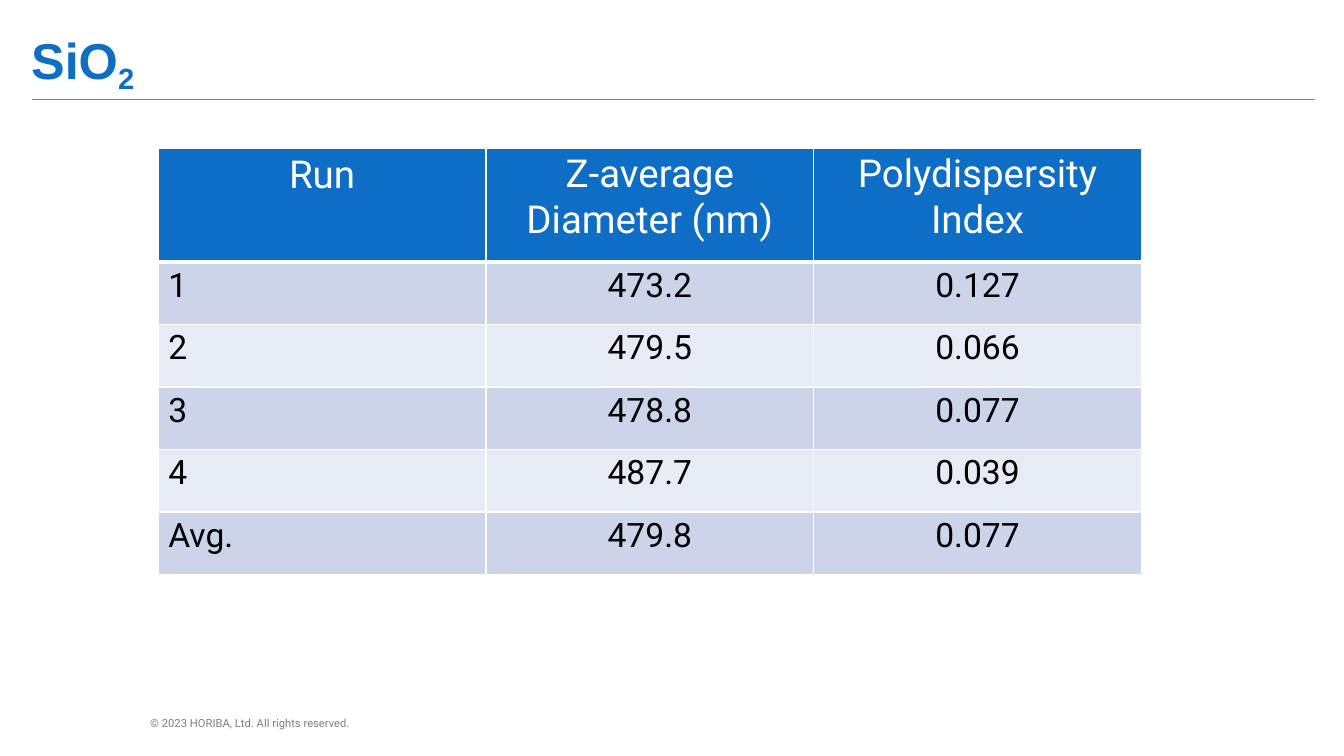
"""Build the SiO₂ particle-size results slide."""
from dataclasses import dataclass

from lxml.etree import SubElement
from pptx import Presentation
from pptx.dml.color import RGBColor as Color
from pptx.enum.shapes import MSO_CONNECTOR as Connector
from pptx.enum.text import PP_ALIGN as Align
from pptx.oxml.ns import qn
from pptx.slide import Slide
from pptx.table import _Cell as Cell
from pptx.text.text import Font
from pptx.util import Inches, Pt


@dataclass(frozen=True)
class Theme:
    """Colours, fonts and type sizes."""
    blue: str = "0E6EC5"
    grey: str = "7E7E7E"
    white: str = "FFFFFF"
    black: str = "000000"
    bands: tuple[str, str] = ("CCD4EA", "E7EBF5")
    title_font: str = "Arial"
    body_font: str = "Roboto"
    title_size: float = 36
    header_size: float = 27.5
    value_size: float = 24
    footer_size: float = 8


@dataclass(frozen=True)
class Label:
    """A line of text with its box and style."""
    spans: tuple[str, ...]
    left: float
    top: float
    width: float
    height: float
    font: str
    size: float
    color: str
    bold: bool = False


@dataclass(frozen=True)
class Measurement:
    """One row of the results table."""
    run: str
    diameter: str
    index: str


THEME = Theme()
LABELS = (
    Label(("SiO", "2"), 0.31, 0.28, 8.7, 0.63, THEME.title_font, THEME.title_size, THEME.blue, True),
    Label(("© 2023 HORIBA, Ltd. All rights reserved.",), 1.49, 7.1, 2.09, 0.16,
          THEME.body_font, THEME.footer_size, THEME.grey),
)
HEADERS = ("Run", "Z-average Diameter (nm)", "Polydispersity Index")
MEASUREMENTS = (
    Measurement("1", "473.2", "0.127"),
    Measurement("2", "479.5", "0.066"),
    Measurement("3", "478.8", "0.077"),
    Measurement("4", "487.7", "0.039"),
    Measurement("Avg.", "479.8", "0.077"),
)
COLUMN_WIDTH, HEADER_HEIGHT, ROW_HEIGHT = 3.25, 1.13, 0.62


def style_font(font: Font, name: str, size: float, color: str, bold: bool = False) -> None:
    """Set the typeface, size, colour and weight."""
    font.name, font.size, font.bold = name, Pt(size), bold
    font.color.rgb = Color.from_string(color)


def draw_label(page: Slide, label: Label) -> None:
    """Draw a text box, with any second span as a subscript."""
    box = page.shapes.add_textbox(*map(Inches, (label.left, label.top, label.width, label.height)))
    frame = box.text_frame
    frame.word_wrap = True
    frame.margin_left = frame.margin_right = frame.margin_bottom = 0
    frame.margin_top = Inches(0.01)
    para = frame.paragraphs[0]
    for position, text in enumerate(label.spans):
        span = para.add_run()
        span.text = text
        style_font(span.font, label.font, label.size, label.color, label.bold)
        if position:
            span._r.get_or_add_rPr().set("baseline", "-20000")


def draw_rule(page: Slide) -> None:
    """Draw the line under the title."""
    rule = page.shapes.add_connector(
        Connector.STRAIGHT, *map(Inches, (0.32, 0.99, 13.04, 0.99)))
    rule.line.color.rgb = Color.from_string(THEME.grey)
    rule.line.width = Pt(1)
    SubElement(rule._element.spPr, qn("a:effectLst"))


def set_borders(cell: Cell, top: float, bottom: float) -> None:
    """Give a cell white borders of the given widths in points."""
    properties = cell._tc.get_or_add_tcPr()
    for side, width in (("L", 1), ("R", 1), ("T", top), ("B", bottom)):
        border = SubElement(properties, qn(f"a:ln{side}"), w=str(Pt(width)))
        fill = SubElement(border, qn("a:solidFill"))
        SubElement(fill, qn("a:srgbClr"), val=THEME.white)


def fill_cell(cell: Cell, text: str, row: int, column: int) -> None:
    """Write and style a header or value cell."""
    header = row == 0
    set_borders(cell, 3 if row == 1 else 1, 3 if header else 1)
    cell.fill.solid()
    cell.fill.fore_color.rgb = Color.from_string(
        THEME.blue if header else THEME.bands[(row - 1) % 2])
    side = 0.2 if header else 0.1 if column == 0 else 0
    cell.margin_left, cell.margin_right = Inches(side), Inches(side)
    cell.margin_top = Inches(0.03 if header and column else 0.05 if header else 0.04)
    cell.margin_bottom = 0
    para = cell.text_frame.paragraphs[0]
    para.text = text
    para.alignment = Align.CENTER if header or column else Align.LEFT
    if header and column:
        para.line_spacing = 1.02
    style_font(para.runs[0].font, THEME.body_font,
               THEME.header_size if header else THEME.value_size,
               THEME.white if header else THEME.black)


def draw_results(page: Slide) -> None:
    """Draw the table of measurements."""
    rows = [HEADERS] + [(item.run, item.diameter, item.index) for item in MEASUREMENTS]
    height = HEADER_HEIGHT + ROW_HEIGHT * len(MEASUREMENTS)
    table = page.shapes.add_table(
        len(rows), len(HEADERS), Inches(1.57), Inches(1.47),
        Inches(COLUMN_WIDTH * len(HEADERS)), Inches(height)).table
    for column in table.columns:
        column.width = Inches(COLUMN_WIDTH)
    for row, texts in enumerate(rows):
        table.rows[row].height = Inches(ROW_HEIGHT if row else HEADER_HEIGHT)
        for column, text in enumerate(texts):
            fill_cell(table.cell(row, column), text, row, column)


def main() -> None:
    """Build and save the deck."""
    deck = Presentation()
    deck.slide_width, deck.slide_height = Inches(13.33), Inches(7.5)
    page = deck.slides.add_slide(deck.slide_layouts[6])
    draw_rule(page)
    for label in LABELS:
        draw_label(page, label)
    draw_results(page)
    deck.save("out.pptx")


if __name__ == "__main__":
    main()
